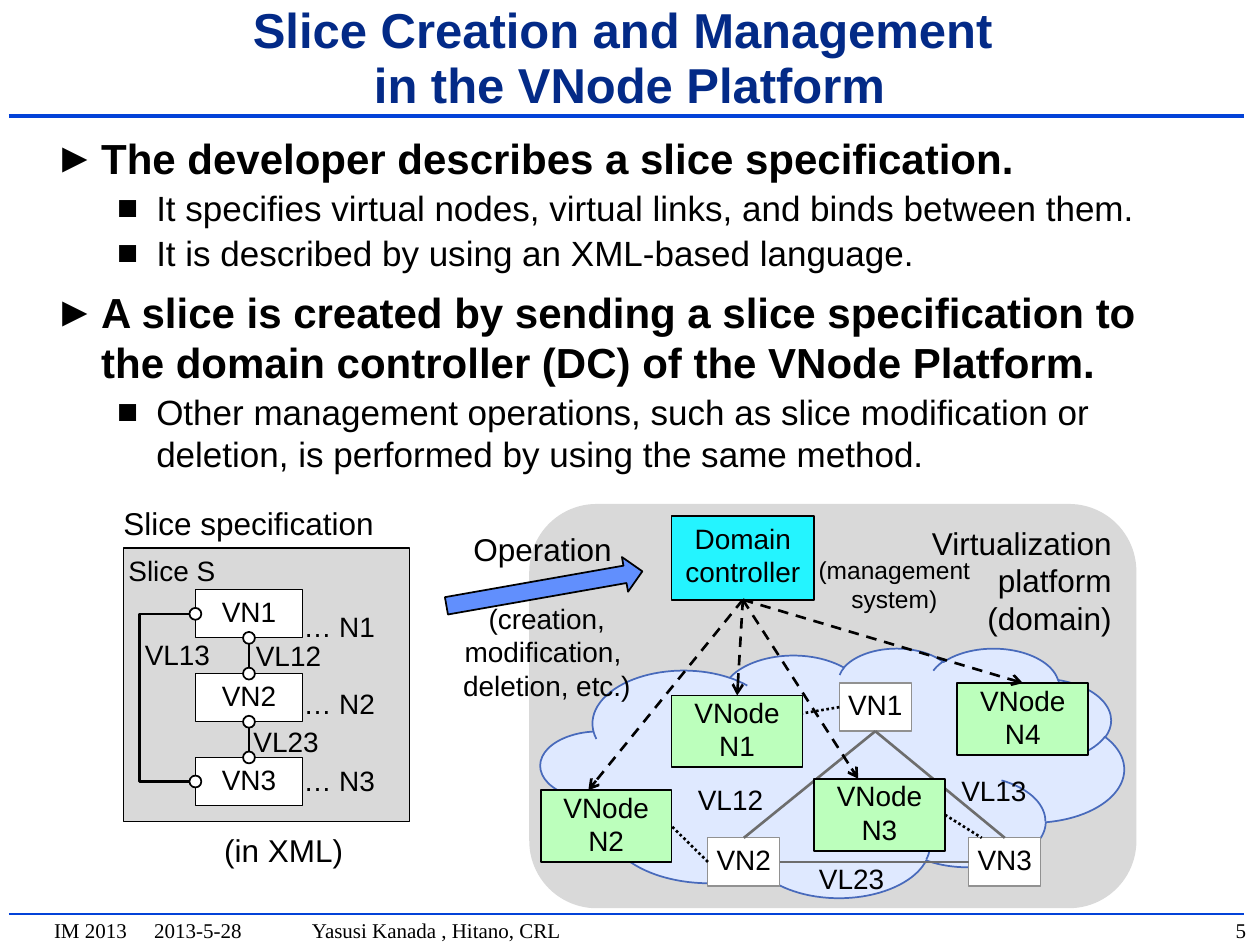
from lxml import etree
from pptx import Presentation, util as u
from pptx.dml.color import RGBColor
from pptx.enum import dml, shapes, text
from pptx.oxml.ns import qn

# Content (all lengths in cm)
TITLE = "Slice Creation and Management \vin the VNode Platform"
BODY = [
    (0, "The developer describes a slice specification."),
    (1, "It specifies virtual nodes, virtual links, and binds between them."),
    (1, "It is described by using an XML-based language."),
    (0, "A slice is created by sending a slice specification to the domain "
        "controller (DC) of the VNode Platform."),
    (1, "Other management operations, such as slice modification or deletion, "
        "is performed by using the same method."),
]
LEVELS = [  # bullet, indent left, hanging, format
    ("►", 0.95, 0.95, dict(size=24, bold=True, before=7.2)),
    ("■", 2.06, 0.79, dict(size=20, bold=False, before=2)),
]
FOOTER = "IM 2013\t2013-5-28\tYasusi Kanada , Hitano, CRL"
TABS = (2.02, 5.2)
VNODES = {"N1": (13.54, 14.02), "N2": (10.9, 15.93),
          "N3": (16.41, 15.7), "N4": (19.3, 13.77)}
VNS = {"VN1": (16.92, 13.77), "VN2": (14.27, 16.89), "VN3": (19.53, 16.89)}
TOP, LEFT, BOTTOM, RIGHT = range(4)
VLINKS = [(("VN1", BOTTOM), ("VN2", TOP)), (("VN1", BOTTOM), ("VN3", TOP)),
          (("VN2", RIGHT), ("VN3", LEFT))]
ORDERS = [("N1", TOP), ("N4", TOP), (11.86, 15.93), (17.3, 15.7)]
BINDS = [(("VN1", LEFT), (16.18, 14.38)), (("VN2", LEFT), ("N2", RIGHT)),
         (("N3", RIGHT), (19.79, 16.89))]
VLABELS = [("VL13", 2.92, 12.85), ("VL12", 5.16, 12.88), ("VL23", 5.11, 14.61),
           ("VL13", 19.38, 15.6), ("VL12", 14.07, 15.77), ("VL23", 16.51, 17.37)]

MSO, AL = shapes.MSO_SHAPE, text.PP_ALIGN
prs = Presentation()
prs.slide_width, prs.slide_height = u.Cm(25.4), u.Cm(19.05)
slide = prs.slides.add_slide(prs.slide_layouts[1])
nodes = {}


def cms(*vals):
    return [u.Cm(v) for v in vals]


def paint(target, color):
    if hasattr(target, "solid"):
        target.solid()
        target = target.fore_color
    target.rgb = RGBColor.from_string(color)


def style(par, size=16, bold=False, color="000000", font="Arial",
          align=AL.LEFT, before=0, lead=None):
    for key, val in dict(alignment=align, space_before=u.Pt(before),
                         line_spacing=lead).items():
        setattr(par, key, val)
    for key, val in dict(size=u.Pt(size), bold=bold, name=font).items():
        setattr(par.font, key, val)
    paint(par.font.color, color)


def write(shape, words, ins=(0, 0, 0, 0), wrap=True,
          anchor=text.MSO_ANCHOR.TOP, **fmt):
    frame = shape.text_frame
    sides = ("left", "top", "right", "bottom")
    vals = {"margin_" + s: u.Cm(v) for s, v in zip(sides, ins)}
    vals.update(word_wrap=wrap, vertical_anchor=anchor,
                auto_size=text.MSO_AUTO_SIZE.NONE, text=words)
    for key, val in vals.items():
        setattr(frame, key, val)
    for par in frame.paragraphs:
        style(par, **fmt)
    return frame


def label(words, box, **fmt):
    return write(slide.shapes.add_textbox(*cms(*box)), words, **fmt)


def draw(kind, box, fill, line=None, width=0.75, words="", top=0.1, **fmt):
    shape = slide.shapes.add_shape(kind, *cms(*box))
    shape.shadow.inherit = False
    paint(shape.fill, fill)
    if line:
        paint(shape.line.fill, line)
        shape.line.width = u.Pt(width)
    else:
        shape.line.fill.background()
    if words:
        write(shape, words, (0.1, top, 0.1, 0.1), **fmt)
    return shape


def link(start, end, color="000000", width=1.5, dash=None, arrow=False,
         kind=shapes.MSO_CONNECTOR.STRAIGHT):
    """Each end is a point or a (node name, side) pair."""
    ends = (start, end)
    spots = [(0, 0) if e[0] in nodes else e for e in ends]
    con = slide.shapes.add_connector(kind, *cms(*spots[0], *spots[1]))
    for end, join in zip(ends, (con.begin_connect, con.end_connect)):
        if end[0] in nodes:
            join(nodes[end[0]], end[1])
    paint(con.line.fill, color)
    con.line.width = u.Pt(width)
    if dash:
        con.line.dash_style = dash
    if arrow:
        etree.SubElement(con.line._get_or_add_ln(), qn("a:tailEnd"), type="arrow")
    etree.SubElement(con._element.spPr, qn("a:effectLst"))
    return con


# Rules and footer
for y, width in ((2.34, 2), (18.42, 1)):
    link((0.18, y), (25.07, y), "0342D8", width)
foot = label(FOOTER, (0.84, 18.36, 23.44, 0.76), ins=(0.25, 0.13, 0.25, 0.13),
             size=12, font="Times New Roman")
stops = etree.SubElement(foot.paragraphs[0]._p.get_or_add_pPr(), qn("a:tabLst"))
for stop in TABS:
    etree.SubElement(stops, qn("a:tab"), pos=str(u.Cm(stop)), algn="l")
label("5", (23.7, 18.36, 1.67, 0.76), ins=(0.25, 0.13, 0.25, 0.13),
      size=12, font="Times New Roman", align=AL.RIGHT)

# Title and list
title, body = slide.placeholders
for holder, box in ((title, (0.84, 0.46, 23.7, 1.47)), (body, (0.84, 2.54, 23.7, 8.59))):
    holder.left, holder.top, holder.width, holder.height = cms(*box)
write(title, TITLE, (0.25, 0.13, 0.25, 0.13), anchor=text.MSO_ANCHOR.MIDDLE,
      size=28, bold=True, color="032A87", align=AL.CENTER, lead=0.95)
frame = write(body, "\n".join(words for _, words in BODY), (0.25, 0.13, 0.25, 0.13))
for par, (level, _) in zip(frame.paragraphs, BODY):
    sign, left, hang, fmt = LEVELS[level]
    par.level = level
    style(par, **fmt)
    props = par._p.get_or_add_pPr()
    props.set("marL", str(u.Cm(left)))
    props.set("indent", str(-u.Cm(hang)))
    etree.SubElement(props, qn("a:buFont"), typeface="Arial")
    etree.SubElement(props, qn("a:buChar"), char=sign)
    props.append(props.find(qn("a:defRPr")))

# Platform
draw(MSO.ROUNDED_RECTANGLE, (10.67, 10.16, 12.24, 8.15), "D9D9D9", top=0,
     words="Virtualization\vplatform\v(domain)", size=18, align=AL.RIGHT)

# Slice specification: a column of virtual nodes with ports on their sides
draw(MSO.RECTANGLE, (2.49, 11.05, 5.77, 5.51), "D9D9D9", "000000", words="Slice S")
x, y, w, h, step, port = 3.94, 11.89, 2.16, 0.97, 1.69, 0.24
mid, low = x + w / 2, y + 2 * step
for i in range(3):
    draw(MSO.RECTANGLE, (x, y + i * step, w, h), "FFFFFF", "000000",
         words=f"VN{i + 1}", align=AL.CENTER)
ports = [(x, y + h / 2), (x, low + h / 2)]
for i in range(2):
    upper, lower = y + i * step + h, y + (i + 1) * step
    ports += [(mid, upper), (mid, lower)]
    link((mid, upper + port / 2), (mid, lower - port / 2))
for px, py in ports:
    draw(MSO.OVAL, (px - port / 2, py - port / 2, port, port), "FFFFFF", "000000", 1)
bend = link((x - 0.1, y + h / 2), (x - 0.13, low + h / 2),
            kind=shapes.MSO_CONNECTOR.ELBOW)
guides = bend._element.spPr.find(qn("a:prstGeom")).get_or_add_avLst()
etree.SubElement(guides, qn("a:gd"), name="adj1", fmla="val 3400000")
label("… N1\n… N2\n… N3", (5.87, 11.28, 1.96, 4.95), ins=(0.25, 0.13, 0.25, 0.13),
      wrap=False, lead=2.29)

# Virtual network over the physical nodes
draw(MSO.CLOUD, (10.9, 13.06, 11.76, 5.03), "DFE9FF", "486ABB", 1)
nodes["DC"] = draw(MSO.RECTANGLE, (13.54, 10.41, 2.87, 1.68), "24F4FF", "000000", 1,
                   "Domain controller", align=AL.CENTER)
for name, spot in VNS.items():
    nodes[name] = draw(MSO.RECTANGLE, (*spot, 1.45, 0.97), "FFFFFF", "919191",
                       words=name, align=AL.CENTER)
for start, end in VLINKS:
    link(start, end, "6D6D6D")
for name, spot in VNODES.items():
    nodes[name] = draw(MSO.RECTANGLE, (*spot, 2.64, 1.45), "BCFFBC", "000000", 1,
                       "VNode " + name, top=0, align=AL.CENTER)
for end in ORDERS:
    link(("DC", BOTTOM), end, dash=dml.MSO_LINE.DASH, arrow=True)
for start, end in BINDS:
    link(start, end, dash=dml.MSO_LINE.ROUND_DOT)

# Operation arrow and labels
draw(MSO.RIGHT_ARROW, (8.97, 11.51, 4.01, 0.71), "618FFD", "000000", 1).rotation = 350
for words, lx, ly in VLABELS:
    label(words, (lx, ly, 1.32, 0.69), wrap=False)
label("Slice specification", (2.49, 10.16, 5.99, 0.76), size=18)
label("(in XML)", (4.52, 16.76, 2.97, 0.76), size=18)
label("(management system)", (16.43, 11.18, 3.2, 1.19), size=14, align=AL.CENTER)
oper = label("Operation \n(creation, modification, \vdeletion, etc.)",
             (8.51, 10.69, 5.03, 3.51), align=AL.CENTER)
style(oper.paragraphs[0], size=18, align=AL.CENTER)
style(oper.paragraphs[1], before=19, align=AL.CENTER)

prs.save("out.pptx")
